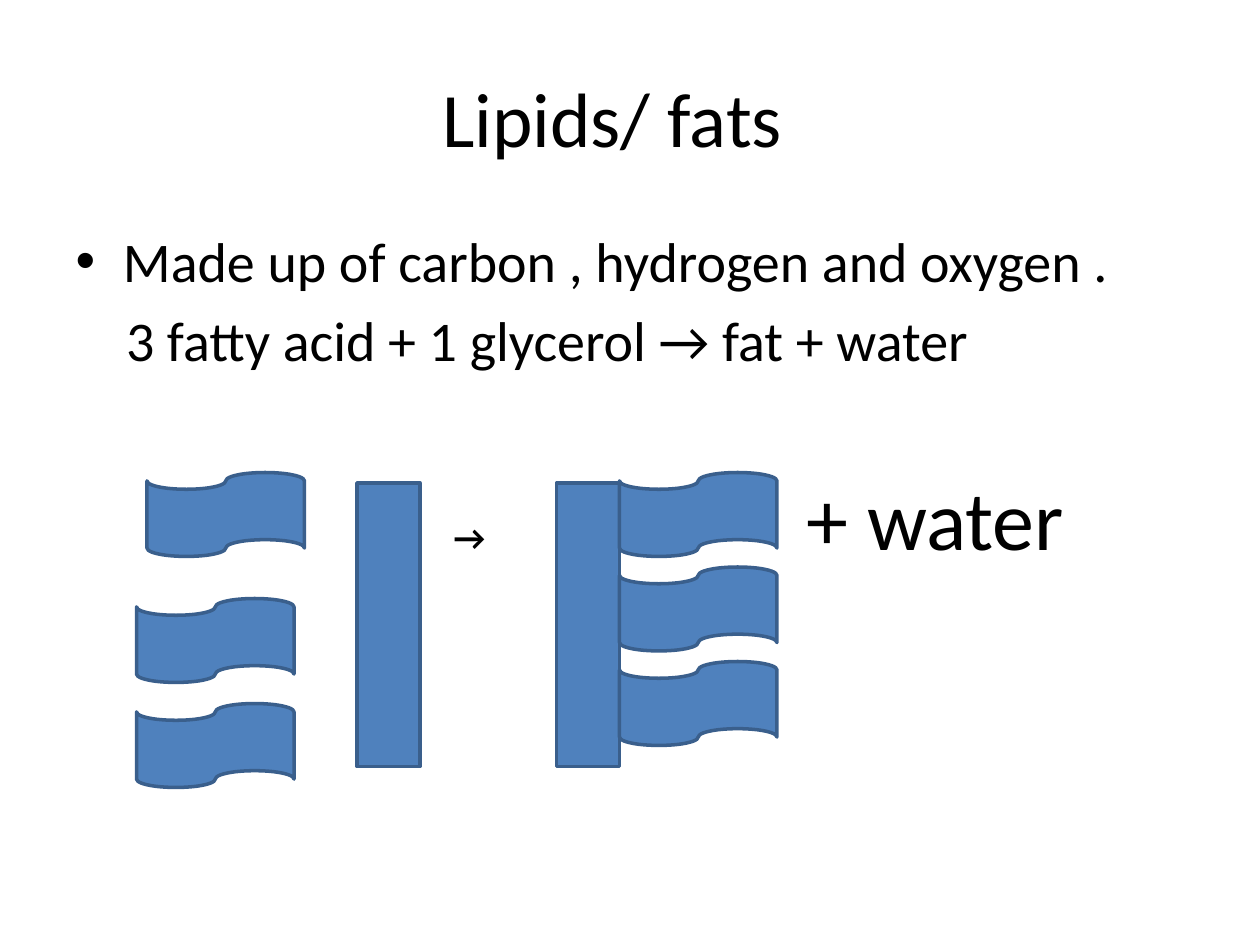
from dataclasses import dataclass

from lxml.etree import SubElement
from pptx import Presentation
from pptx.dml.color import RGBColor
from pptx.enum.shapes import MSO_SHAPE
from pptx.enum.text import MSO_ANCHOR, PP_ALIGN
from pptx.oxml.ns import qn
from pptx.util import Inches, Pt

BLACK = RGBColor(0x00, 0x00, 0x00)
BLUE = RGBColor(0x4F, 0x81, 0xBD)
DARK_BLUE = RGBColor(0x3A, 0x5F, 0x8C)
FONT = "Calibri"
CELL = Inches(1) // 12  # the diagram sits on a grid of twelfths of an inch


@dataclass(frozen=True)
class Molecule:
    """A kind of molecule, with its size in grid cells."""
    shape: MSO_SHAPE
    cols: int
    rows: int


FATTY_ACID = Molecule(MSO_SHAPE.FLOWCHART_PUNCHED_TAPE, 15, 8)
GLYCEROL = Molecule(MSO_SHAPE.RECTANGLE, 6, 27)

# Molecule, column, row; from back to front
DIAGRAM = [
    (FATTY_ACID, 14, 45),
    (FATTY_ACID, 13, 57),
    (FATTY_ACID, 13, 67),
    (GLYCEROL, 34, 46),
    (GLYCEROL, 53, 46),
    *((FATTY_ACID, 59, row) for row in (63, 54, 45)),
]


def place(ph, left: float, top: float, width: float, height: float) -> None:
    ph.left, ph.top = Inches(left), Inches(top)
    ph.width, ph.height = Inches(width), Inches(height)


def set_font(font, size: int, bold: bool = False) -> None:
    font.name, font.size, font.bold = FONT, Pt(size), bold
    font.color.rgb = BLACK


def add_run(p, text: str, size: int, bold: bool = False) -> None:
    r = p.add_run()
    r.text = text
    set_font(r.font, size, bold)


def remove_bullet(p) -> None:
    SubElement(p._p.get_or_add_pPr(), qn("a:buNone"))


def draw(s, molecule: Molecule, col: int, row: int) -> None:
    sp = s.shapes.add_shape(molecule.shape, col * CELL, row * CELL,
                            molecule.cols * CELL, molecule.rows * CELL)
    sp.shadow.inherit = False
    sp.fill.solid()
    sp.fill.fore_color.rgb = BLUE
    sp.line.color.rgb = DARK_BLUE
    sp.line.width = Pt(2)


def main() -> None:
    prs = Presentation()
    prs.slide_width, prs.slide_height = Inches(10), Inches(7.5)
    s = prs.slides.add_slide(prs.slide_layouts[1])

    # Title, centred a little to the left
    title = s.shapes.title
    place(title, 0.5, 0.3, 9, 1.25)
    tf = title.text_frame
    tf.vertical_anchor = MSO_ANCHOR.MIDDLE
    tf.margin_right = Inches(0.38)
    p = tf.paragraphs[0]
    p.text = "Lipids/ fats"
    p.alignment = PP_ALIGN.CENTER
    set_font(p.font, 44)

    # Composition and word equation
    body = s.placeholders[1]
    place(body, 0.5, 1.75, 9, 4.95)
    tf = body.text_frame
    p = tf.paragraphs[0]
    p.text = "Made up of carbon , hydrogen and oxygen ."
    set_font(p.font, 32)

    p = tf.add_paragraph()
    p.text = "3 fatty acid + 1 glycerol → fat + water"
    pPr = p._p.get_or_add_pPr()
    pPr.set("marL", str(Inches(0.4)))
    pPr.set("indent", "0")
    remove_bullet(p)
    set_font(p.font, 32)

    # Arrow and water, level with the diagram
    p = tf.add_paragraph()
    p.level = 6
    p.space_before = Pt(54)
    p._p.get_or_add_pPr().set("defTabSz", str(Inches(1)))
    remove_bullet(p)
    add_run(p, "→\t\t\t", 20, bold=True)
    add_run(p, "+ water", 48)

    # Diagram: three fatty acids join one glycerol
    for molecule, col, row in DIAGRAM:
        draw(s, molecule, col, row)

    prs.save("out.pptx")


if __name__ == "__main__":
    main()
